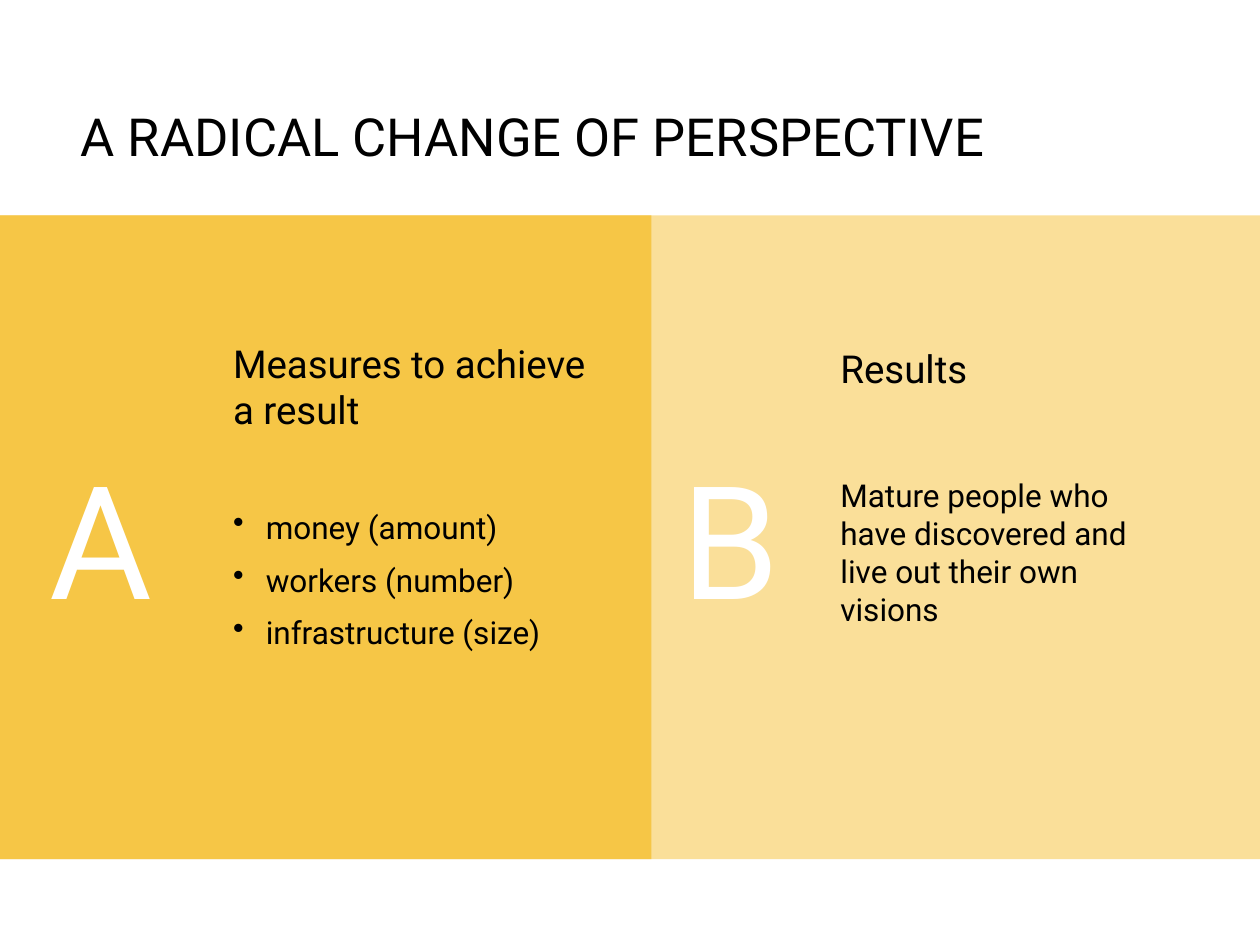
from lxml import etree
from pptx import Presentation
from pptx.dml.color import RGBColor
from pptx.enum import shapes, text
from pptx.oxml.ns import qn
from pptx.util import Inches, Pt

COLORS = {"yellow": "F6C646", "black": "000000", "white": "FFFFFF"}
FONT = "Roboto"

prs = Presentation()
prs.slide_width, prs.slide_height = Inches(10), Inches(7.5)
s = prs.slides.add_slide(prs.slide_layouts[6])


def add_text(box, lines, size, color="black", inset=0.05, middle=False):
    tf = s.shapes.add_textbox(*map(Inches, box)).text_frame
    tf.word_wrap = True
    tf.margin_left = tf.margin_right = Inches(inset)
    tf.margin_top = tf.margin_bottom = Inches(inset)
    if middle:
        tf.vertical_anchor = text.MSO_ANCHOR.MIDDLE
    tf.text = "\n".join(lines)
    for p in tf.paragraphs:
        p.font.name = FONT
        p.font.size = Pt(size)
        p.font.color.rgb = RGBColor.from_string(COLORS[color])
    return tf


# Background panels: pale across the full width, solid on the left
for width, opacity in ((10.05, 55), (5.2, 100)):
    sp = s.shapes.add_shape(shapes.MSO_SHAPE.RECTANGLE, Inches(-0.03),
                            Inches(1.71), Inches(width), Inches(5.11))
    sp.shadow.inherit = False
    sp.line.fill.background()
    sp.fill.solid()
    sp.fill.fore_color.rgb = RGBColor.from_string(COLORS["yellow"])
    if opacity < 100:
        clr = sp._element.spPr.find(".//" + qn("a:srgbClr"))
        etree.SubElement(clr, qn("a:alpha"), val=str(opacity * 1000))

# Title
add_text((0.59, 0.48, 8.84, 1.19), ["A RADICAL CHANGE OF PERSPECTIVE"], 30,
         middle=True)

# Large panel letters
for letter, left in (("A", 0.39), ("B", 5.41)):
    add_text((left, 3.39, 1.57, 1.74), [letter], 90, "white", 0, True)

# Panel headings
add_text((1.8, 2.65, 3.04, 0.88), ["Measures to achieve a result"], 22)
add_text((6.62, 2.69, 3.3, 0.49), ["Results"], 22)

# Left panel: bulleted measures
measures = add_text((1.8, 3.86, 3.3, 1.31),
                    ["money (amount)", "workers (number)",
                     "infrastructure (size)"], 18)
indent = Inches(0.26)
for p in measures.paragraphs:
    p.line_spacing = 1.4
    pPr = p._p.get_or_add_pPr()
    pPr.set("marL", str(indent))
    pPr.set("indent", str(-indent))
    bullet = etree.Element(qn("a:buChar"), char="•")
    pPr.find(qn("a:lnSpc")).addnext(bullet)

# Right panel: description of the results
add_text((6.62, 3.73, 2.6, 1.38),
         ["Mature people who have discovered and live out their own visions"],
         18)

prs.save("out.pptx")
